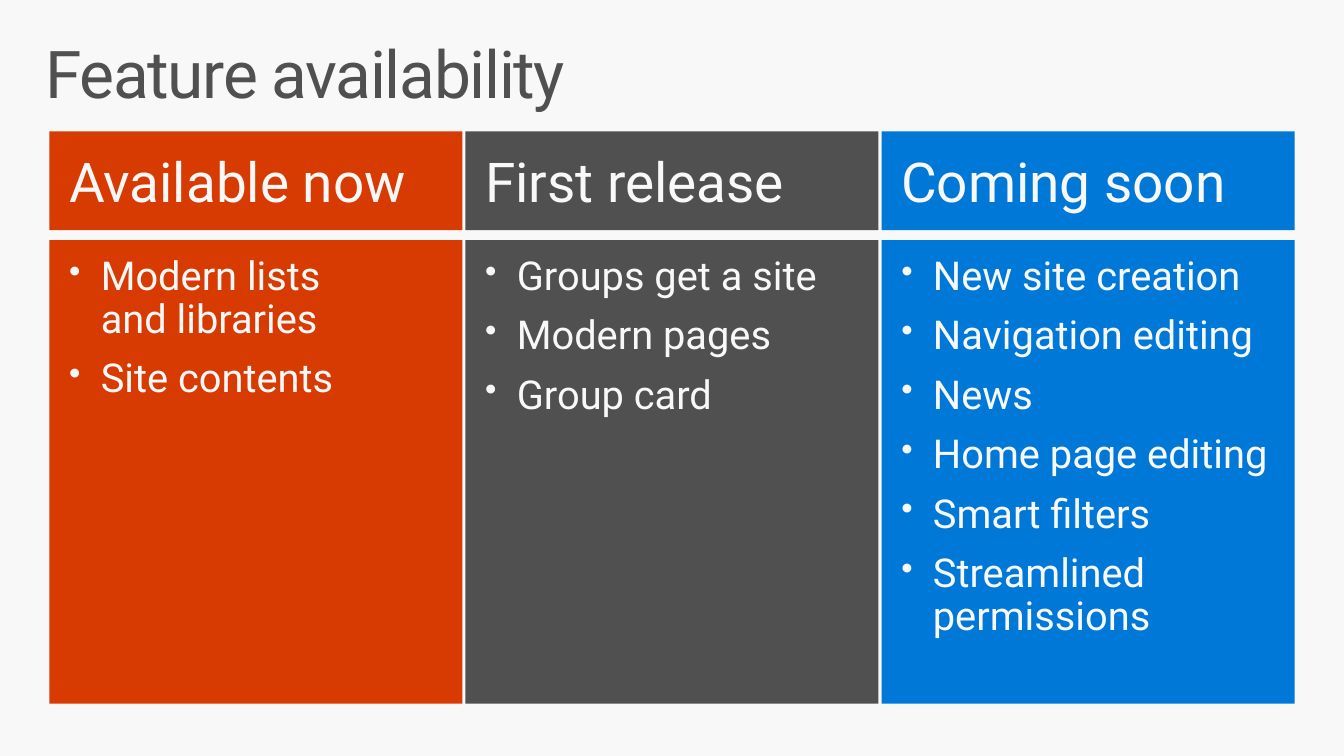
from dataclasses import dataclass

from lxml import etree
from pptx import Presentation
from pptx.dml.color import RGBColor
from pptx.enum.shapes import MSO_SHAPE
from pptx.enum.text import MSO_ANCHOR, PP_ALIGN
from pptx.oxml.ns import qn
from pptx.slide import Slide
from pptx.text.text import TextFrame, _Paragraph
from pptx.util import Pt

RECTANGLE = MSO_SHAPE.RECTANGLE
TOP = MSO_ANCHOR.TOP
LEFT = PP_ALIGN.LEFT

EMU_PER_PX = 9144
FONT = "Roboto"
COLORS = {
    "paper": "F8F8F8",
    "gray": "505050",
    "orange": "D83B01",
    "blue": "0078D7",
}

SLIDE_WIDTH, SLIDE_HEIGHT = 1360, 765
COLUMN_LEFT, COLUMN_WIDTH, COLUMN_STEP = 50, 418, 421
HEADING_TOP, HEADING_HEIGHT = 133, 100
FEATURES_TOP, FEATURES_HEIGHT = 243, 469
BULLET_INDENT = 32


@dataclass(frozen=True)
class Stage:
    heading: str
    color: str
    features: tuple[str, ...]


@dataclass(frozen=True)
class Box:
    left: int
    top: int
    width: int
    height: int

    def emu(self) -> tuple[int, int, int, int]:
        return px(self.left), px(self.top), px(self.width), px(self.height)


STAGES = (
    Stage("Available now", "orange", ("Modern lists \nand libraries", "Site contents")),
    Stage("First release", "gray", ("Groups get a site", "Modern pages", "Group card")),
    Stage(
        "Coming soon",
        "blue",
        (
            "New site creation",
            "Navigation editing",
            "News",
            "Home page editing",
            "Smart filters",
            "Streamlined permissions",
        ),
    ),
)


def px(length: int) -> int:
    return length * EMU_PER_PX


def rgb(color: str) -> RGBColor:
    return RGBColor.from_string(COLORS[color])


def set_frame(frame: TextFrame, side: int, edge: int) -> None:
    frame.word_wrap = True
    frame.vertical_anchor = TOP
    frame.margin_left = frame.margin_right = px(side)
    frame.margin_top = frame.margin_bottom = px(edge)


def write(paragraph: _Paragraph, text: str, size: int, color: str) -> None:
    paragraph.text = text
    paragraph.alignment = LEFT
    for run in paragraph.runs:
        run.font.name = FONT
        run.font.size = Pt(size)
        run.font.color.rgb = rgb(color)


def add_bullet(paragraph: _Paragraph) -> None:
    paragraph.line_spacing = 0.9
    paragraph.space_after = Pt(12)
    properties = paragraph._p.get_or_add_pPr()
    properties.set("marL", str(px(BULLET_INDENT)))
    properties.set("indent", str(-px(BULLET_INDENT)))
    etree.SubElement(properties, qn("a:buSzPct")).set("val", "85000")
    etree.SubElement(properties, qn("a:buChar")).set("char", "•")


def add_panel(slide: Slide, box: Box, color: str) -> TextFrame:
    panel = slide.shapes.add_shape(RECTANGLE, *box.emu())
    panel.shadow.inherit = False
    panel.fill.solid()
    panel.fill.fore_color.rgb = rgb(color)
    panel.line.fill.background()
    set_frame(panel.text_frame, 20, 16)
    return panel.text_frame


def add_title(slide: Slide, text: str) -> None:
    title = slide.shapes.add_textbox(*Box(30, 32, 1300, 100).emu()).text_frame
    set_frame(title, 16, 10)
    paragraph = title.paragraphs[0]
    write(paragraph, text, 48, "gray")
    paragraph.line_spacing = 0.9
    paragraph.runs[0].font._element.set("spc", "-100")


def add_stage(slide: Slide, stage: Stage, left: int) -> None:
    heading_box = Box(left, HEADING_TOP, COLUMN_WIDTH, HEADING_HEIGHT)
    heading = add_panel(slide, heading_box, stage.color)
    write(heading.paragraphs[0], stage.heading, 40, "paper")

    features_box = Box(left, FEATURES_TOP, COLUMN_WIDTH, FEATURES_HEIGHT)
    features = add_panel(slide, features_box, stage.color)
    for index, feature in enumerate(stage.features):
        paragraph = features.add_paragraph() if index else features.paragraphs[0]
        write(paragraph, feature, 29, "paper")
        add_bullet(paragraph)


def main() -> None:
    presentation = Presentation()
    presentation.slide_width = px(SLIDE_WIDTH)
    presentation.slide_height = px(SLIDE_HEIGHT)
    slide = presentation.slides.add_slide(presentation.slide_layouts[6])
    slide.background.fill.solid()
    slide.background.fill.fore_color.rgb = rgb("paper")

    add_title(slide, "Feature availability")
    for index, stage in enumerate(STAGES):
        add_stage(slide, stage, COLUMN_LEFT + index * COLUMN_STEP)
    presentation.save("out.pptx")


if __name__ == "__main__":
    main()
